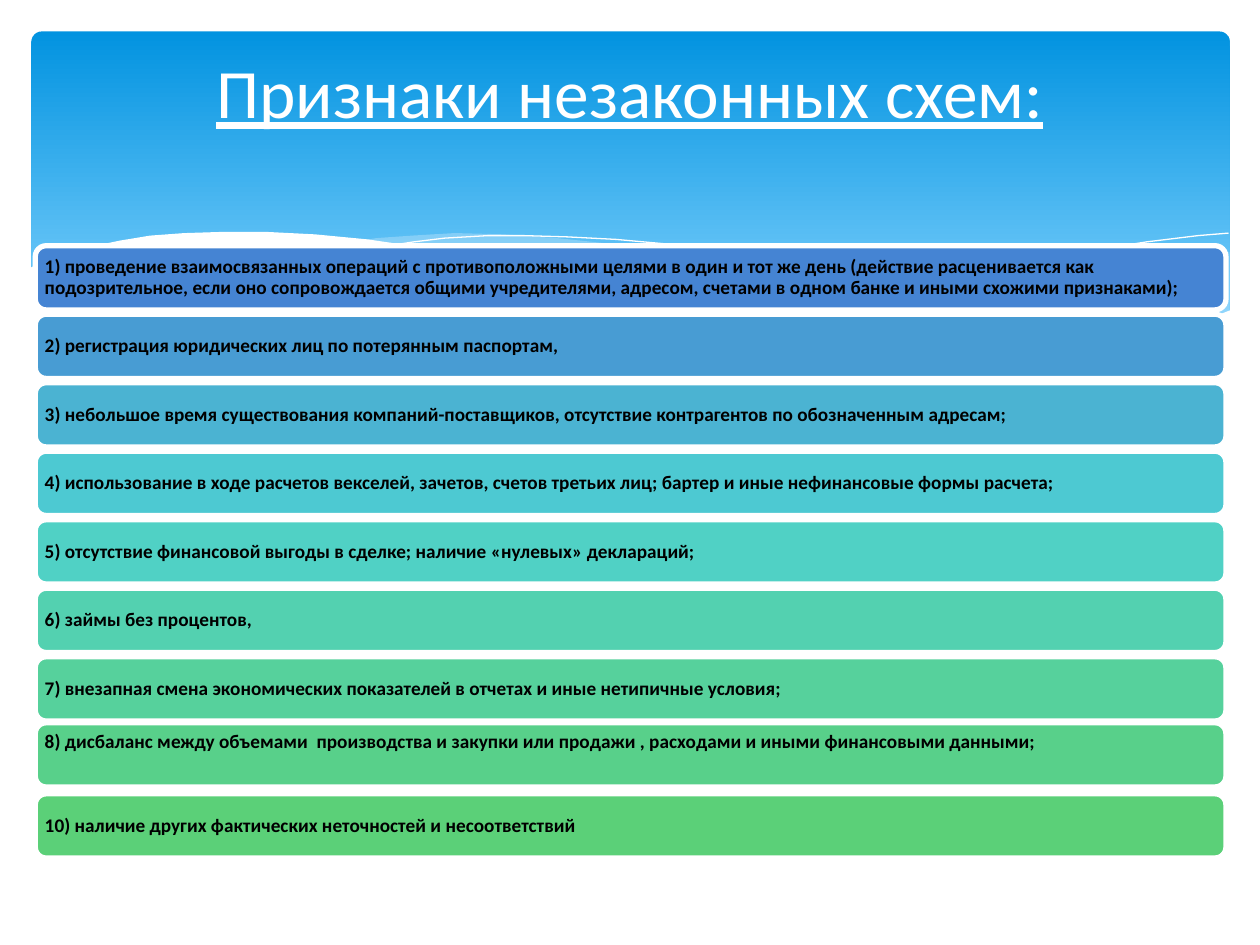
from dataclasses import dataclass
from lxml.etree import SubElement
from pptx import Presentation
from pptx.dml.color import RGBColor as Rgb
from pptx.enum.shapes import MSO_SHAPE as Kind
from pptx.enum.text import MSO_ANCHOR as Anchor, PP_ALIGN as Align
from pptx.oxml.ns import qn
from pptx.util import Inches, Pt


@dataclass(frozen=True)
class Theme:
    font: str = "Calibri"
    head: float = 39.6
    body: float = 11
    white: str = "FFFFFF"
    black: str = "000000"
    mist: str = "C6E7FC"
    sky: tuple = (("0293E0", 0), ("83D3FE", 0.9))
    rows: tuple = ("4584D3", "489CD3", "4BB3D2", "4DC9D2", "50D1C5",
                   "53D1B0", "56D19C", "58D08A", "5BD078")


THEME = Theme()

ITEMS = (
    "1) проведение взаимосвязанных операций с противоположными целями в один и тот же день "
    "(действие расценивается как подозрительное, если оно сопровождается общими учредителями, "
    "адресом, счетами в одном банке и иными схожими признаками);",
    "2) регистрация юридических лиц по потерянным паспортам,",
    "3) небольшое время существования компаний-поставщиков, отсутствие контрагентов по "
    "обозначенным адресам;",
    "4) использование в ходе расчетов векселей, зачетов, счетов третьих лиц; бартер и иные "
    "нефинансовые формы расчета;",
    "5) отсутствие финансовой выгоды в сделке; наличие «нулевых» деклараций;",
    "6) займы без процентов,",
    "7) внезапная смена экономических показателей в отчетах и иные нетипичные условия;",
    "8) дисбаланс между объемами  производства и закупки или продажи , расходами и иными "
    "финансовыми данными;",
    "10) наличие других фактических неточностей и несоответствий",
)
RAISED = 7

RIGHT = (
    (9.53, .16), (9.25, .2), (8.98, .26), (8.68, .32), (8.38, .39), (7.82, .53), (7.3, .64),
    (6.83, .73), (6.38, .81), (6.68, .83), (6.96, .87), (7.22, .9), (7.46, .92), (7.8, .93),
    (8.12, .93), (8.4, .91), (8.66, .88), (8.9, .83), (9.12, .78), (9.4, .68), (9.53, .63))
MIDDLE = (
    (8.7, .89), (8.43, .85), (7.84, .76), (7.18, .63), (6.45, .47), (6.06, .38), (5.75, .3),
    (5.46, .24), (5.18, .19), (4.91, .14), (4.66, .1), (4.19, .05), (3.76, .02), (3.38, .01),
    (3.05, .03), (2.76, .05), (2.63, .07), (3, .12), (3.39, .19), (3.81, .27), (4.26, .38),
    (5.07, .56), (5.78, .71), (6.42, .82), (6.99, .9), (7.5, .93), (7.95, .94), (8.34, .93))
FALL = (
    (2.86, .11), (3.05, .08), (3.3, .05), (3.64, .03), (3.93, .03), (4.27, .04), (4.66, .06),
    (5.1, .1), (5.59, .16), (6.13, .24), (6.72, .35), (7.37, .49), (8.08, .67), (8.84, .88))
RISE = (
    (5.9, .73), (6.3, .62), (6.72, .51), (7.25, .39), (7.83, .26), (8.43, .15), (8.87, .08),
    (9.28, .03), (9.52, .01))
FRONT = (
    (9.54, .62), (9.36, .69), (9.17, .75), (8.97, .81), (8.76, .85), (8.52, .89), (8.27, .91),
    (8, .93), (7.7, .92), (7.38, .91), (7.03, .88), (6.65, .84), (6.25, .78), (5.8, .7),
    (5.32, .61), (4.8, .49), (4.24, .36), (3.68, .23), (3.17, .13), (2.69, .06), (2.27, .02),
    (1.88, 0), (1.54, 0), (1.23, .01), (.96, .03), (.72, .07), (.53, .11), (.36, .15),
    (.23, .19), (.13, .23), (0, .29), (0, 1.45), (9.54, 1.45))


def apply(part, form):
    for name, value in form.items():
        setattr(part, name, value)


def paint(shape, tone, alpha=None):
    shape.fill.solid()
    shape.fill.fore_color.rgb = Rgb.from_string(tone)
    if alpha is not None:
        node = shape._element.spPr.find(qn("a:solidFill"))[0]
        SubElement(node, qn("a:alpha")).set("val", str(alpha * 1000))


def border(shape, width):
    shape.line.color.rgb = Rgb.from_string(THEME.white)
    shape.line.width = Pt(width)


def add_box(slide, box, curve):
    shape = slide.shapes.add_shape(Kind.ROUNDED_RECTANGLE, *map(Inches, box))
    shape.shadow.inherit = False
    shape.adjustments[0] = curve
    return shape


def write(shape, text, frame, para, font, tone):
    apply(shape.text_frame, {"word_wrap": True, **frame})
    shape.text_frame.text = text
    line = shape.text_frame.paragraphs[0]
    apply(line, para)
    apply(line.runs[0].font, {"name": THEME.font, **font})
    line.runs[0].font.color.rgb = Rgb.from_string(tone)


def add_band(slide, box):
    band = add_box(slide, box, 0.03)
    band.line.fill.background()
    band.fill.gradient()
    band.fill.gradient_angle = 270
    for stop, (tone, spot) in zip(band.fill.gradient_stops, THEME.sky):
        stop.color.rgb = Rgb.from_string(tone)
        stop.position = spot


def add_wave(slide, box, points, closed):
    left, top = box[:2]
    spots = [(Inches(left + x), Inches(top + y)) for x, y in points]
    build = slide.shapes.build_freeform(*spots[0])
    build.add_line_segments(spots[1:], close=closed)
    wave = build.convert_to_shape()
    wave.shadow.inherit = False
    return wave


def add_waves(slide, box):
    for points, alpha in ((RIGHT, 29), (MIDDLE, 40)):
        wave = add_wave(slide, box, points, True)
        paint(wave, THEME.mist, alpha)
        wave.line.fill.background()
    for points in (FALL, RISE):
        wave = add_wave(slide, box, points, False)
        wave.fill.background()
        border(wave, 0)
    front = add_wave(slide, box, FRONT, True)
    paint(front, THEME.white)
    front.line.fill.background()


def add_rows(slide, box):
    left, top, width, height = box
    tall = 0.51
    pitch = (height - tall) / (len(ITEMS) - 1)
    pads = dict.fromkeys(
        ("margin_left", "margin_right", "margin_top", "margin_bottom"), Inches(0.05))
    for i, (text, tone) in enumerate(zip(ITEMS, THEME.rows)):
        lift = 0.02 if i == RAISED else 0
        row = add_box(slide, (left, top + i * pitch - lift, width, tall), 0.17)
        paint(row, tone)
        border(row, 3)
        anchor = Anchor.TOP if i == RAISED else Anchor.MIDDLE
        write(row, text, {"vertical_anchor": anchor, **pads},
              {"alignment": Align.LEFT, "line_spacing": 0.9},
              {"size": Pt(THEME.body), "bold": True}, THEME.black)


def add_title(slide, box):
    title = slide.shapes.title
    apply(title, dict(zip(("left", "top", "width", "height"), map(Inches, box))))
    write(title, "Признаки незаконных схем:",
          {"vertical_anchor": Anchor.TOP, "margin_top": Inches(0.02)},
          {"alignment": Align.CENTER},
          {"size": Pt(THEME.head), "underline": True}, THEME.white)
    slide.shapes._spTree.append(title._element)


def main():
    deck = Presentation()
    apply(deck, {"slide_width": Inches(10), "slide_height": Inches(7.5)})
    slide = deck.slides.add_slide(deck.slide_layouts[5])
    add_band(slide, (0.25, 0.25, 9.51, 2.7))
    add_waves(slide, (0.23, 1.84, 9.54, 1.45))
    add_rows(slide, (0.28, 1.95, 9.45, 4.86))
    add_title(slide, (0.5, 0.37, 9, 1.37))
    deck.save("out.pptx")


if __name__ == "__main__":
    main()
